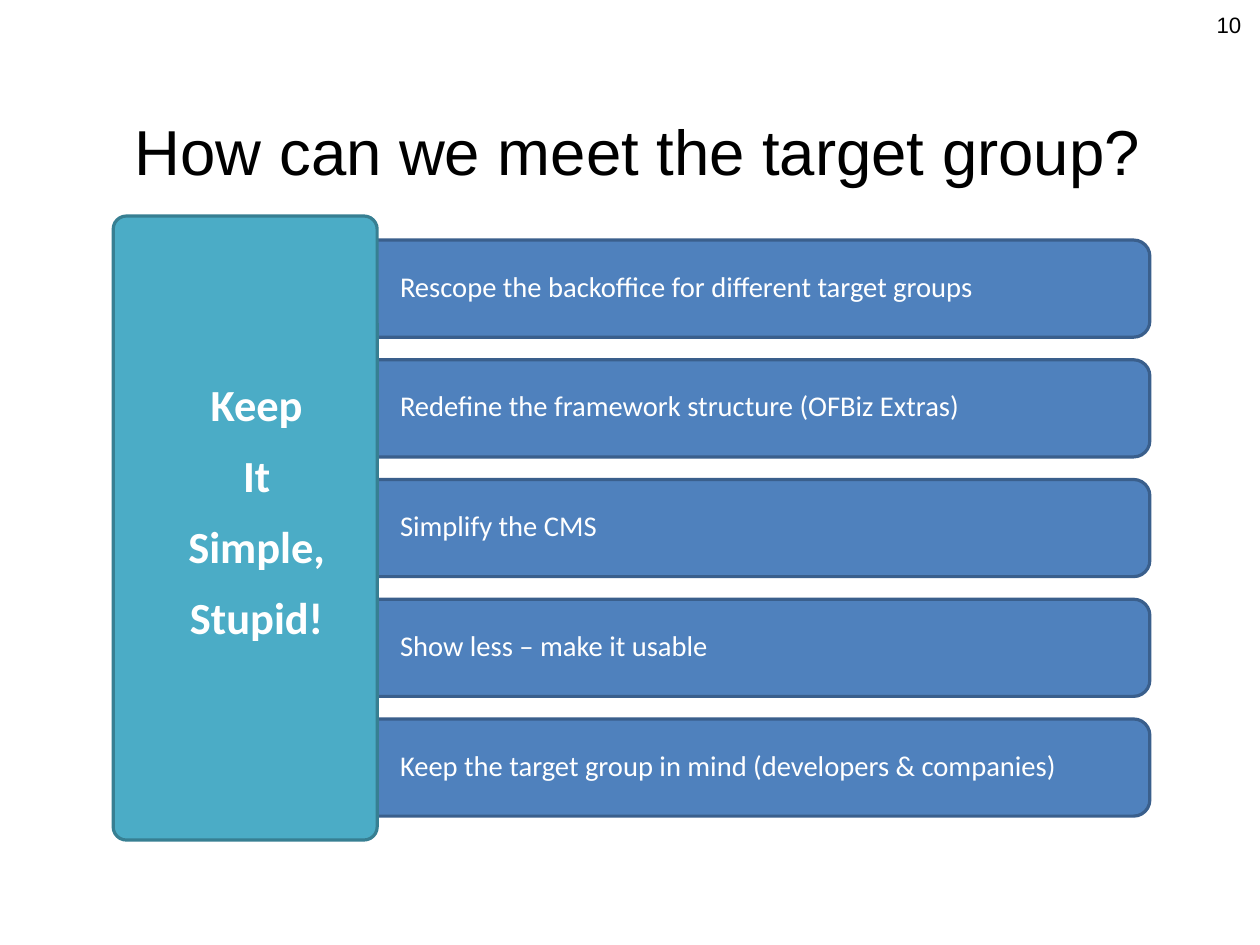
from dataclasses import dataclass

from pptx import Presentation
from pptx.dml.color import RGBColor
from pptx.enum.shapes import MSO_SHAPE
from pptx.enum.text import MSO_ANCHOR, PP_ALIGN
from pptx.util import Inches, Pt


@dataclass(frozen=True)
class Theme:
    """Colours, fonts and type sizes of the slide."""
    ink: str = "000000"
    paper: str = "FFFFFF"
    bar_fill: str = "4F81BD"
    bar_line: str = "3A5F8C"
    panel_fill: str = "4BACC6"
    panel_line: str = "377F92"
    heading_font: str = "Arial"
    body_font: str = "Calibri"
    title_size: int = 40
    motto_size: int = 28
    label_size: int = 18
    number_size: int = 14
    line_width: int = 2


THEME = Theme()
CENTIMETRES_PER_INCH = 2.54
MEASURES = [
    "Rescope the backoffice for different target groups",
    "Redefine the framework structure (OFBiz Extras)",
    "Simplify the CMS",
    "Show less – make it usable",
    "Keep the target group in mind (developers & companies)",
]
MOTTO = ["Keep", "It", "Simple,", "Stupid!"]


def write_lines(shape, lines, font, size, color, align=PP_ALIGN.LEFT,
                anchor=MSO_ANCHOR.MIDDLE, bold=False, gap=0, insets=(0, 0, 0, 0)):
    """Fill a shape with one paragraph per line in a single style."""
    frame = shape.text_frame
    frame.word_wrap = True
    frame.vertical_anchor = anchor
    (frame.margin_left, frame.margin_top,
     frame.margin_right, frame.margin_bottom) = map(Inches, insets)
    for index, line in enumerate(lines):
        paragraph = frame.add_paragraph() if index else frame.paragraphs[0]
        paragraph.text = line
        paragraph.alignment = align
        paragraph.space_before = Pt(gap if index else 0)
        paragraph.font.name = font
        paragraph.font.size = Pt(size)
        paragraph.font.bold = bold
        paragraph.font.color.rgb = RGBColor.from_string(color)


def add_text(slide, box, text, font, size, color, **style):
    """Place a single line of text in a box."""
    shape = slide.shapes.add_textbox(*map(Inches, box))
    write_lines(shape, [text], font, size, color, **style)


def add_rounded(slide, box, fill, line):
    """Place a filled and outlined rounded rectangle."""
    shape = slide.shapes.add_shape(MSO_SHAPE.ROUNDED_RECTANGLE, *map(Inches, box))
    shape.shadow.inherit = False
    shape.fill.solid()
    shape.fill.fore_color.rgb = RGBColor.from_string(fill)
    shape.line.color.rgb = RGBColor.from_string(line)
    shape.line.width = Pt(THEME.line_width)
    return shape


def add_measures(slide, box, measures, bar_height=0.85):
    """Stack evenly spaced labelled bars from top to bottom of the box."""
    left, top, width, height = box
    step = (height - bar_height) / (len(measures) - 1)
    label_indent, label_drop, label_width, label_height = 0.81, 0.25, 6.5, 0.3
    for index, measure in enumerate(measures):
        bar_top = top + index * step
        add_rounded(slide, (left, bar_top, width, bar_height),
                    THEME.bar_fill, THEME.bar_line)
        add_text(slide, (left + label_indent, bar_top + label_drop,
                         label_width, label_height),
                 measure, THEME.body_font, THEME.label_size, THEME.paper)


def add_motto(slide, box, lines):
    """Draw the tall panel with the motto."""
    panel = add_rounded(slide, box, THEME.panel_fill, THEME.panel_line)
    panel.adjustments[0] = 0.05
    write_lines(panel, lines, THEME.body_font, THEME.motto_size, THEME.paper,
                align=PP_ALIGN.CENTER, bold=True, gap=11.2,
                insets=(0.2, 0, 0, 0.31))


def main():
    """Build and save the slide."""
    presentation = Presentation()
    presentation.slide_width = Inches(28 / CENTIMETRES_PER_INCH)
    presentation.slide_height = Inches(21 / CENTIMETRES_PER_INCH)
    slide = presentation.slides.add_slide(presentation.slide_layouts[6])
    add_text(slide, (1.18, 0.94, 9.06, 0.75), "How can we meet the target group?",
             THEME.heading_font, THEME.title_size, THEME.ink)
    add_measures(slide, (2.69, 2.1, 7.37, 5.04), MEASURES)
    add_motto(slide, (0.99, 1.89, 2.31, 5.46), MOTTO)
    add_text(slide, (10.51, 0.1, 0.35, 0.35), "10", THEME.heading_font,
             THEME.number_size, THEME.ink, align=PP_ALIGN.RIGHT, anchor=MSO_ANCHOR.TOP)
    presentation.save("out.pptx")


if __name__ == "__main__":
    main()
